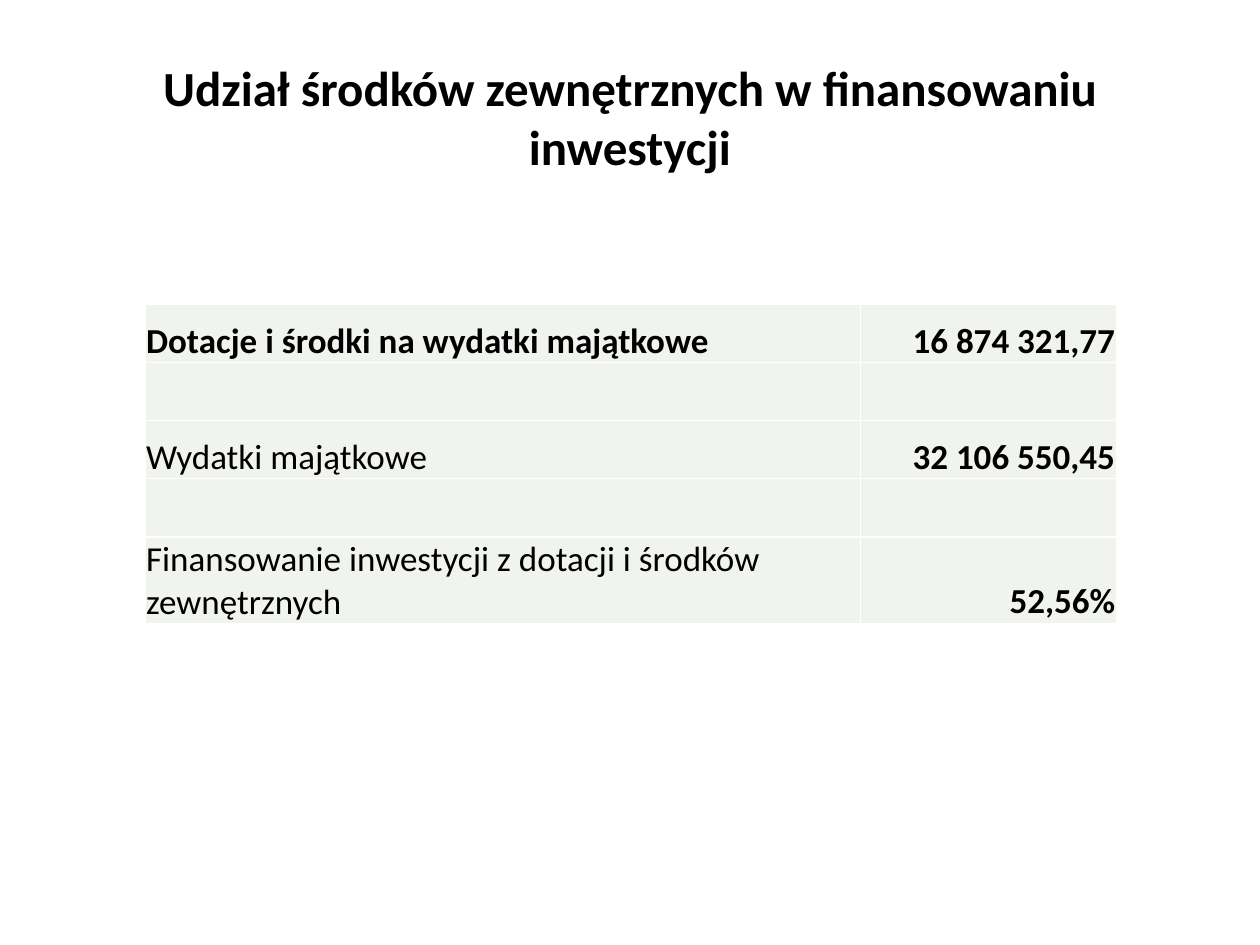
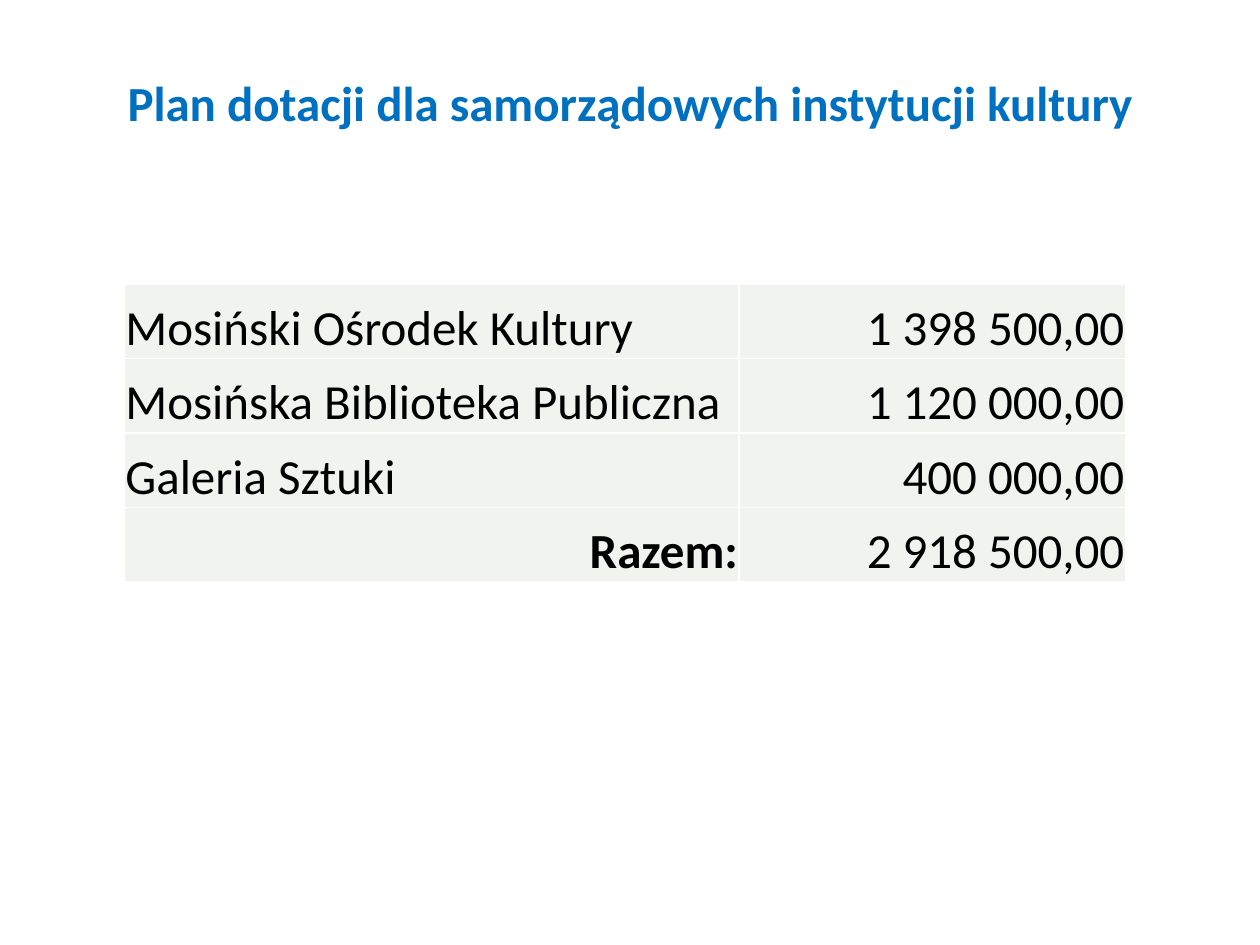
from dataclasses import dataclass
from lxml import etree
from pptx import Presentation
from pptx.dml.color import RGBColor
from pptx.enum.text import MSO_ANCHOR, PP_ALIGN
from pptx.oxml.ns import qn
from pptx.util import Pt

LEFT, CENTER, RIGHT = PP_ALIGN.LEFT, PP_ALIGN.CENTER, PP_ALIGN.RIGHT
MIDDLE, BOTTOM = MSO_ANCHOR.MIDDLE, MSO_ANCHOR.BOTTOM


@dataclass(frozen=True)
class Theme:
    font: str = "Calibri"
    black: str = "000000"
    blue: str = "0070C0"
    cell: str = "F0F3EE"
    border: str = "FFFFFF"
    title_size: int = 28
    small_table: int = 20
    large_table: int = 28


theme = Theme()


def write(tf, text, size, color, bold, align):
    """Fill a text frame with one formatted paragraph."""
    tf.text = text
    p = tf.paragraphs[0]
    p.alignment = align
    for r in p.runs:
        r.font.name, r.font.size, r.font.bold = theme.font, Pt(size), bold
        r.font.color.rgb = RGBColor.from_string(color)


def add_borders(cell):
    """Draw a thin line on the four sides of a cell."""
    tc_pr = cell._tc.get_or_add_tcPr()
    for i, side in enumerate(("lnL", "lnR", "lnT", "lnB")):
        ln = etree.Element(qn(f"a:{side}"), w=str(Pt(1)))
        fill = etree.SubElement(ln, qn("a:solidFill"))
        etree.SubElement(fill, qn("a:srgbClr"), val=theme.border)
        tc_pr.insert(i, ln)


# Slide contents; each cell is (text, bold, alignment)
EMPTY = [("", False, LEFT), ("", False, RIGHT)]
slides = [
    dict(
        title="Udział środków zewnętrznych w finansowaniu inwestycji",
        title_color=theme.black, title_height=90,
        table_at=(82.8, 174), columns=(409, 146.2),
        row_heights=[33.2] * 4 + [49.4], size=theme.small_table,
        rows=[
            [("Dotacje i środki na wydatki majątkowe", True, LEFT),
             ("16 874 321,77", True, RIGHT)],
            EMPTY,
            [("Wydatki majątkowe", False, LEFT),
             ("32 106 550,45", True, RIGHT)],
            EMPTY,
            [("Finansowanie inwestycji z dotacji i środków zewnętrznych",
              False, LEFT), ("52,56%", True, RIGHT)],
        ],
    ),
    dict(
        title="Plan dotacji dla samorządowych instytucji kultury",
        title_color=theme.blue, title_height=72.8,
        table_at=(71, 162.4), columns=(351.3, 220.8),
        row_heights=[42.6] * 4, size=theme.large_table,
        rows=[
            [("Mosiński Ośrodek Kultury", False, LEFT),
             ("1 398 500,00", False, RIGHT)],
            [("Mosińska Biblioteka Publiczna", False, LEFT),
             ("1 120 000,00", False, RIGHT)],
            [("Galeria Sztuki", False, LEFT), ("400 000,00", False, RIGHT)],
            [("Razem:", True, RIGHT), ("2 918 500,00", False, RIGHT)],
        ],
    ),
]

prs = Presentation()
prs.slide_width, prs.slide_height = Pt(720), Pt(540)

for content in slides:
    s = prs.slides.add_slide(prs.slide_layouts[6])

    # Title
    title = s.shapes.add_textbox(Pt(36), Pt(21.6), Pt(648),
                                 Pt(content["title_height"]))
    tf = title.text_frame
    tf.word_wrap = True
    tf.vertical_anchor = MIDDLE
    write(tf, content["title"], theme.title_size, content["title_color"],
          True, CENTER)

    # Table grid
    left, top = content["table_at"]
    widths, heights = content["columns"], content["row_heights"]
    table = s.shapes.add_table(len(heights), len(widths), Pt(left), Pt(top),
                               Pt(sum(widths)), Pt(sum(heights))).table
    table.first_row = table.horz_banding = False
    for column, width in zip(table.columns, widths):
        column.width = Pt(width)
    for row, height in zip(table.rows, heights):
        row.height = Pt(height)

    # Table cells
    for row, values in zip(table.rows, content["rows"]):
        for cell, (text, bold, align) in zip(row.cells, values):
            cell.margin_left = cell.margin_right = cell.margin_top = Pt(0.7)
            cell.margin_bottom = Pt(0)
            cell.vertical_anchor = BOTTOM
            cell.fill.solid()
            cell.fill.fore_color.rgb = RGBColor.from_string(theme.cell)
            add_borders(cell)
            write(cell.text_frame, text, content["size"], theme.black,
                  bold, align)

prs.save("out.pptx")
